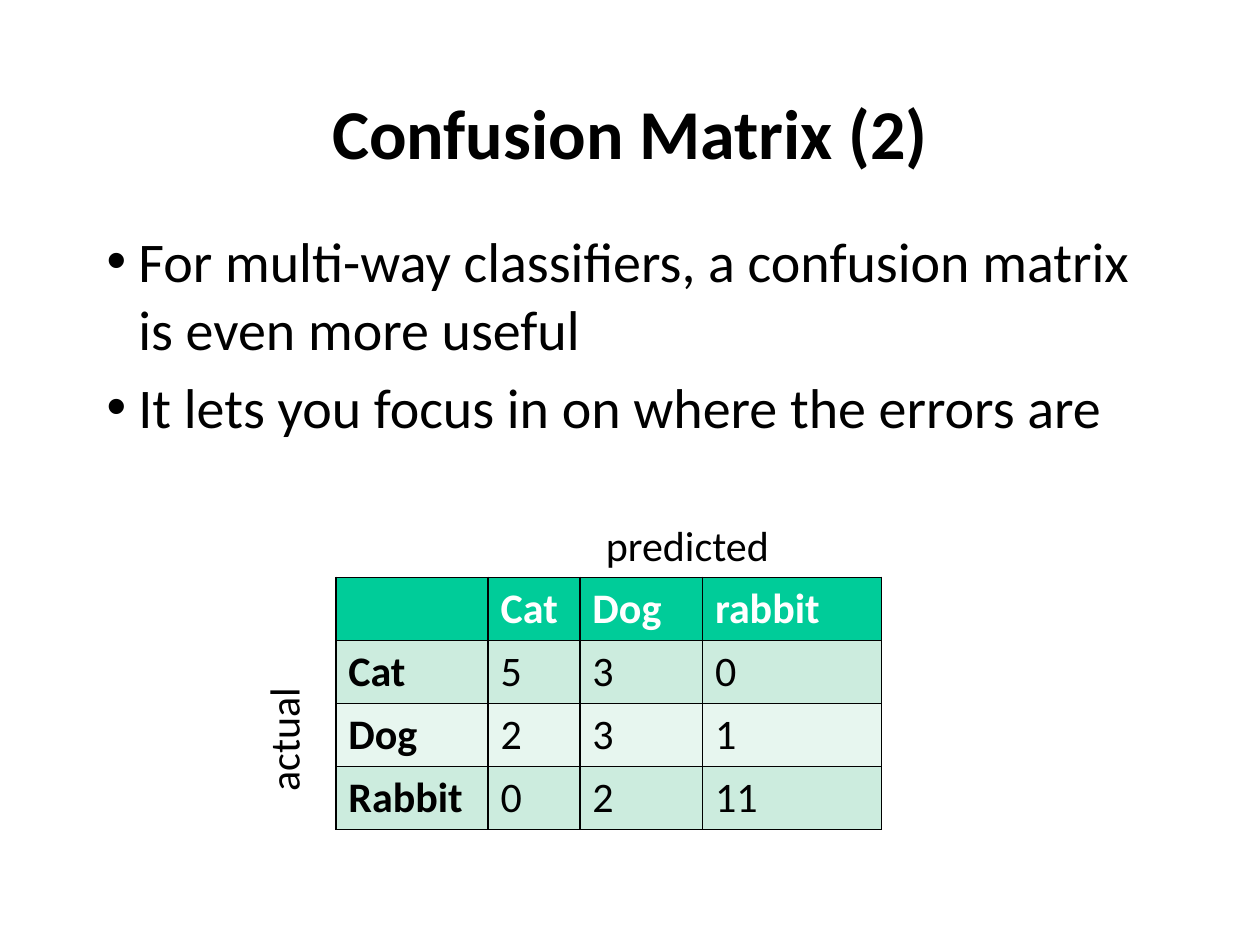
from lxml import etree
from pptx import Presentation
from pptx.dml.color import RGBColor
from pptx.enum.text import MSO_ANCHOR, PP_ALIGN
from pptx.oxml.ns import qn
from pptx.util import Cm, Pt

MIDDLE = MSO_ANCHOR.MIDDLE
TOP = MSO_ANCHOR.TOP
CENTER = PP_ALIGN.CENTER
LEFT = PP_ALIGN.LEFT

BLACK = RGBColor(0x00, 0x00, 0x00)
WHITE = RGBColor(0xFF, 0xFF, 0xFF)
GREEN = RGBColor(0x00, 0xCC, 0x99)
MINT = RGBColor(0xCC, 0xEC, 0xDE)
PALE = RGBColor(0xE7, 0xF6, 0xEF)

FONT = "Calibri"
POINTS = [
    "For multi-way classifiers, a confusion matrix is even more useful",
    "It lets you focus in on where the errors are",
]
MATRIX = [
    ["", "Cat", "Dog", "rabbit"],
    ["Cat", "5", "3", "0"],
    ["Dog", "2", "3", "1"],
    ["Rabbit", "0", "2", "11"],
]
WIDTHS = [3.07, 1.85, 2.47, 3.61]
ROW = 1.27


def style(para, size, color=BLACK, bold=False):
    for run in para.runs:
        font = run.font
        font.name = FONT
        font.size = Pt(size)
        font.bold = bold
        font.color.rgb = color


def add_text(slide, box, lines, size, bold=False, align=CENTER, anchor=TOP):
    frame = slide.shapes.add_textbox(*map(Cm, box)).text_frame
    frame.word_wrap = True
    frame.vertical_anchor = anchor
    frame.text = "\n".join(lines)
    for para in frame.paragraphs:
        para.alignment = align
        style(para, size, bold=bold)
    return frame


def add_points(slide, box):
    frame = add_text(slide, box, POINTS, 32, align=LEFT)
    for para in frame.paragraphs:
        para.space_before = Pt(6.4)
        props = para._p.get_or_add_pPr()
        props.set("marL", str(Cm(0.64)))
        props.set("indent", str(-Cm(0.64)))
        etree.SubElement(props, qn("a:buFont"), typeface="Arial")
        etree.SubElement(props, qn("a:buChar"), char="•")


def add_border(cell):
    props = cell._tc.get_or_add_tcPr()
    for side in ("a:lnL", "a:lnR", "a:lnT", "a:lnB"):
        line = etree.SubElement(props, qn(side), w=str(Pt(1)))
        fill = etree.SubElement(line, qn("a:solidFill"))
        etree.SubElement(fill, qn("a:srgbClr"), val=str(BLACK))


def fill_cell(cell, text, row, col):
    cell.text = text
    cell.vertical_anchor = MIDDLE
    cell.margin_top = cell.margin_bottom = Cm(0.1)
    style(cell.text_frame.paragraphs[0], 24,
          WHITE if row == 0 else BLACK, row == 0 or col == 0)
    add_border(cell)
    cell.fill.solid()
    cell.fill.fore_color.rgb = GREEN if row == 0 else MINT if row % 2 else PALE


def add_matrix(slide, left, top):
    width, height = sum(WIDTHS), ROW * len(MATRIX)
    add_text(slide, (left + 3.18, top - 1.3, width - 3.18, ROW),
             ["predicted"], 24)
    side = add_text(slide, (left - 1.7, top + 1.47, 1.55, 3.6), ["actual"], 24)
    side._txBody.bodyPr.set("vert", "vert270")
    table = slide.shapes.add_table(
        len(MATRIX), len(WIDTHS), Cm(left), Cm(top), Cm(width), Cm(height)
    ).table
    for col, size in zip(table.columns, WIDTHS):
        col.width = Cm(size)
    for r, line in enumerate(MATRIX):
        table.rows[r].height = Cm(ROW)
        for c, text in enumerate(line):
            fill_cell(table.cell(r, c), text, r, c)


def main():
    deck = Presentation()
    deck.slide_width = Cm(25.4)
    deck.slide_height = Cm(19.05)
    slide = deck.slides.add_slide(deck.slide_layouts[6])
    add_text(slide, (1.9, 1.06, 21.6, 3.18), ["Confusion Matrix (2)"], 40,
             bold=True, anchor=MIDDLE)
    add_points(slide, (1.9, 4.45, 21.6, 10.6))
    add_matrix(slide, 6.77, 11.64)
    deck.save("out.pptx")


if __name__ == "__main__":
    main()
